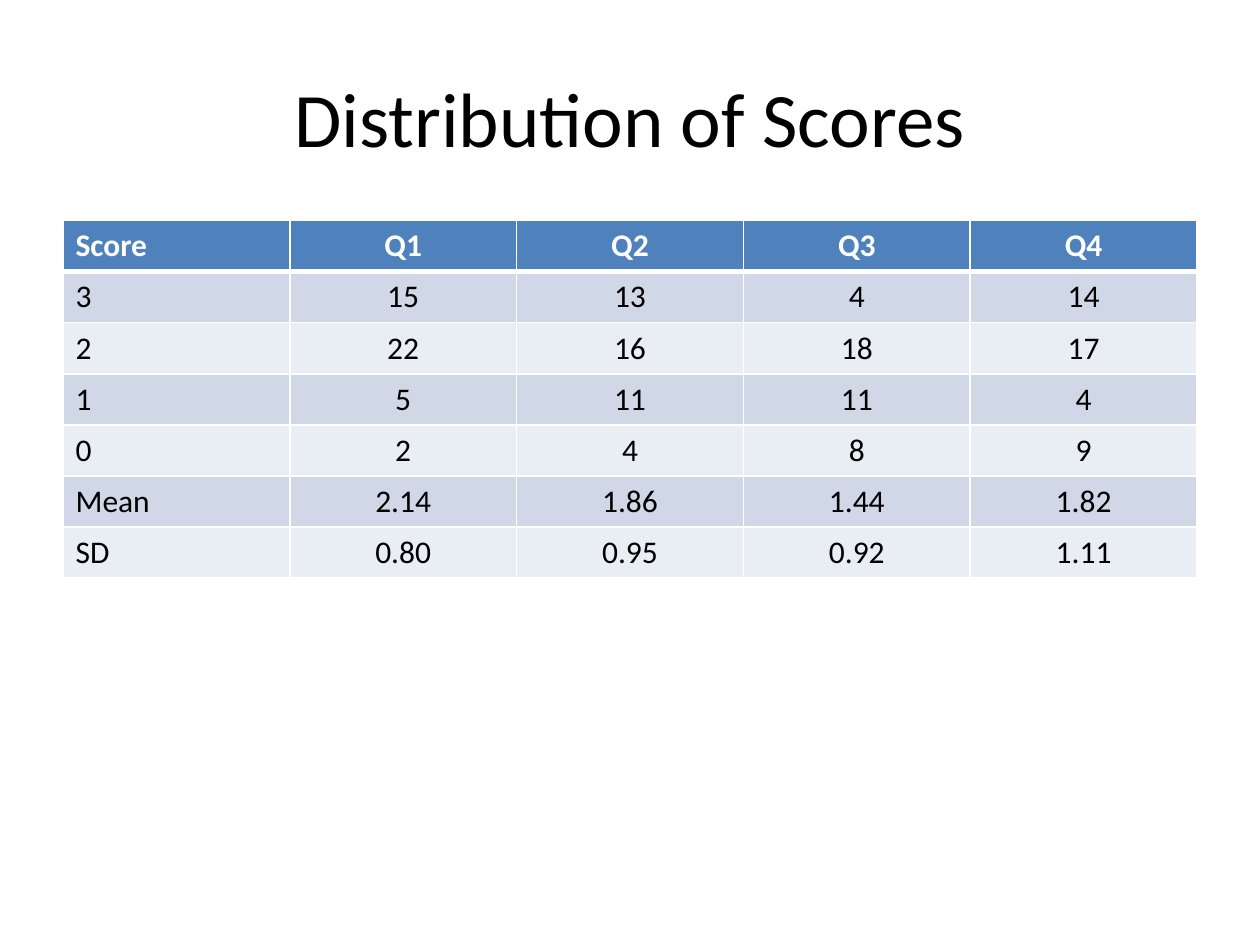
from lxml.etree import SubElement as Sub
from pptx import Presentation
from pptx.dml.color import RGBColor as RGB
from pptx.enum.text import MSO_ANCHOR as Anchor, PP_ALIGN as Align
from pptx.oxml.ns import qn
from pptx.util import Inches, Pt

HUES = {"text": "000000", "head": "4F81BD", "dark": "D0D8E8",
        "light": "E9EDF4", "white": "FFFFFF"}
ROWS = [
    ["Score", "Q1", "Q2", "Q3", "Q4"],
    ["3", "15", "13", "4", "14"],
    ["2", "22", "16", "18", "17"],
    ["1", "5", "11", "11", "4"],
    ["0", "2", "4", "8", "9"],
    ["Mean", "2.14", "1.86", "1.44", "1.82"],
    ["SD", "0.80", "0.95", "0.92", "1.11"],
]
STATS = ("Mean", "SD")


def style(para, align, size, hue, bold=False):
    para.alignment = align
    font = para.runs[0].font
    for key, val in {"name": "Calibri", "size": Pt(size), "bold": bold}.items():
        setattr(font, key, val)
    font.color.rgb = RGB.from_string(HUES[hue])


def edge(cell, widths):
    """Draw white borders; widths are points by side."""
    props = cell._tc.get_or_add_tcPr()
    for spot, side in enumerate("LRTB"):
        line = Sub(props, qn(f"a:ln{side}"), w=str(Pt(widths.get(side, 1))))
        fill = Sub(line, qn("a:solidFill"))
        Sub(fill, qn("a:srgbClr"), val=HUES["white"])
        props.insert(spot, line)


def add_title(slide, box, words):
    title = slide.shapes.title
    for key, val in zip(("left", "top", "width", "height"), box):
        setattr(title, key, val)
    frame = title.text_frame
    frame.text = words
    frame.vertical_anchor = Anchor.MIDDLE
    style(frame.paragraphs[0], Align.CENTER, 44, "text")


def add_scores(slide, box, rows):
    table = slide.shapes.add_table(len(rows), len(rows[0]), *box).table
    for r, row in enumerate(rows):
        head = r == 0
        band = "head" if head else "dark" if r % 2 else "light"
        # The rule under the header is shared by the first two rows
        rule = {0: {"B": 3}, 1: {"T": 3}}.get(r, {})
        for c, words in enumerate(row):
            cell = table.cell(r, c)
            cell.text = words
            cell.vertical_anchor = Anchor.TOP if row[0] in STATS else Anchor.BOTTOM
            cell.fill.solid()
            cell.fill.fore_color.rgb = RGB.from_string(HUES[band])
            style(cell.text_frame.paragraphs[0],
                  Align.CENTER if c else Align.LEFT, 18,
                  "white" if head else "text", head)
            edge(cell, rule)


def main():
    deck = Presentation()
    deck.slide_width, deck.slide_height = Inches(10), Inches(7.5)
    wide, high = deck.slide_width, deck.slide_height
    slide = deck.slides.add_slide(deck.slide_layouts[5])
    left, span = int(wide * 0.05), int(wide * 0.9)

    # Title across the top, table below it
    add_title(slide, (left, int(high * 0.04), span, Inches(1.25)),
              "Distribution of Scores")
    add_scores(slide, (left, Inches(1.75), span, Inches(2.84)), ROWS)
    deck.save("out.pptx")


if __name__ == "__main__":
    main()
